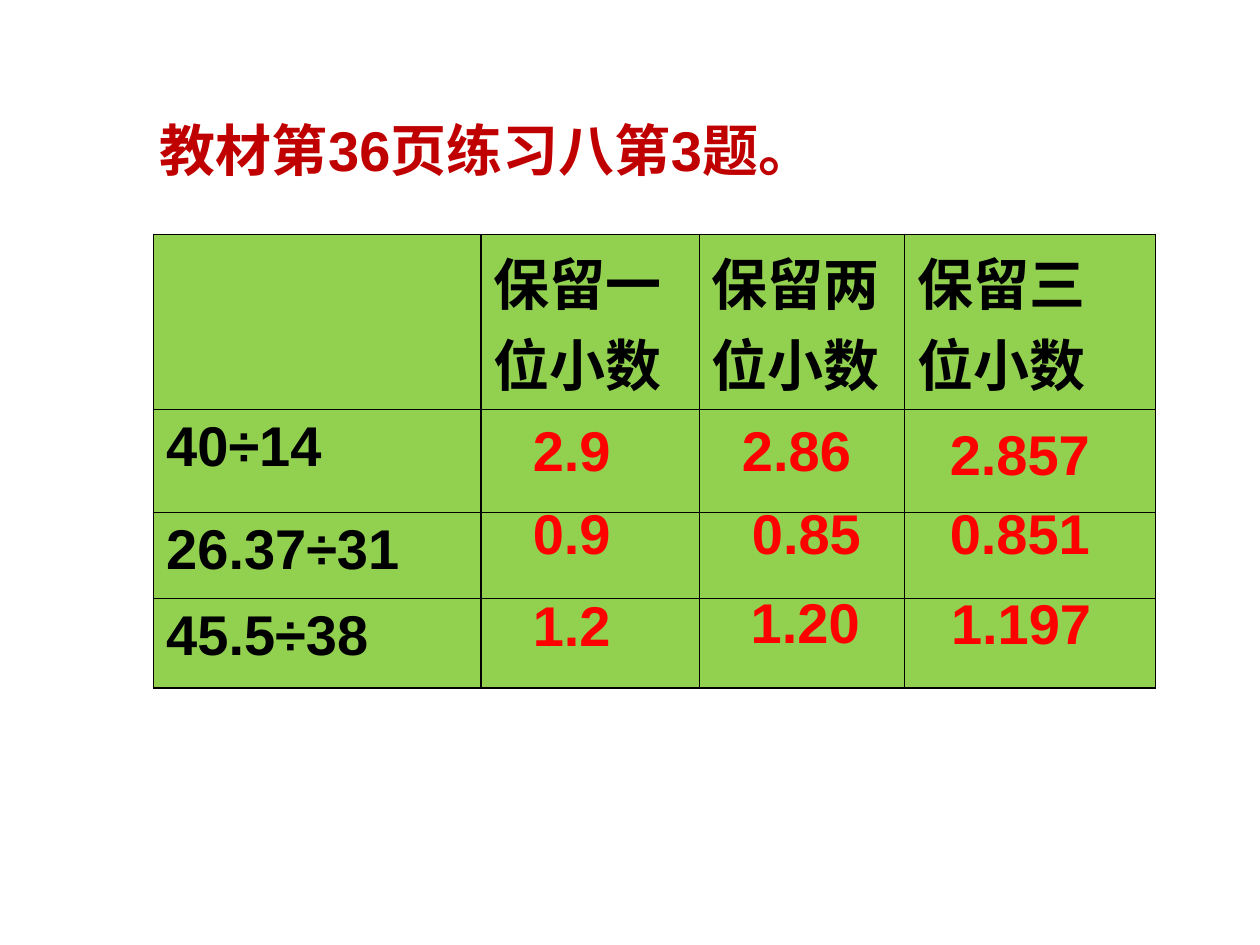
from pptx import Presentation
from pptx.dml.color import RGBColor
from pptx.enum.text import MSO_ANCHOR as Anchor, MSO_AUTO_SIZE as AutoSize, PP_ALIGN as Align
from pptx.oxml import parse_xml
from pptx.oxml.ns import nsdecls
from pptx.util import Pt

COLORS = {"title": "C00000", "cell": "92D050", "text": "000000",
          "answer": "FF0000", "border": "000000"}

COLUMN_WIDTHS = [187.2, 124.6, 117.4, 143.3]
ROW_HEIGHTS = [90.7, 59, 49, 51.1]
EXERCISE = [
    ["", "保留一位小数", "保留两位小数", "保留三\n位小数"],
    ["40÷14", "", "", ""],
    ["26.37÷31", "", "", ""],
    ["45.5÷38", "", "", ""],
]

ANSWER_WIDTHS = [67.7, 85, 113]
# One row per division: (answer, left, top)
ANSWERS = [
    [("2.9", 297.4, 234), ("2.86", 416.9, 233.8), ("2.857", 535.7, 236.2)],
    [("0.9", 297.4, 281.5), ("0.85", 422.6, 281.5), ("0.851", 535.7, 281.5)],
    [("1.2", 297.4, 334.1), ("1.20", 421.9, 331.9), ("1.197", 536.4, 332.6)],
]


def write(frame, text, color, size=32, font="Arial", bold=True, spacing=None):
    """Fill a text frame, one paragraph per line of text."""
    frame.text = text
    for paragraph in frame.paragraphs:
        paragraph.alignment = Align.LEFT
        if spacing:
            paragraph.line_spacing = spacing
        paragraph.font.size = Pt(size)
        paragraph.font.name = font
        paragraph.font.bold = bold
        paragraph.font.color.rgb = RGBColor.from_string(COLORS[color])


class ExerciseSlide:
    def __init__(self, presentation):
        self.slide = presentation.slides.add_slide(presentation.slide_layouts[5])

    def title(self, text, left, top, width, height):
        heading = self.slide.shapes.title
        heading.left, heading.top = Pt(left), Pt(top)
        heading.width, heading.height = Pt(width), Pt(height)
        heading.text_frame.vertical_anchor = Anchor.MIDDLE
        write(heading.text_frame, text, "title", spacing=1.25)

    def table(self, rows, left, top, widths, heights):
        table = self.slide.shapes.add_table(
            len(rows), len(widths), Pt(left), Pt(top),
            Pt(sum(widths)), Pt(sum(heights))).table
        for column, width in zip(table.columns, widths):
            column.width = Pt(width)
        for row, height, texts in zip(table.rows, heights, rows):
            row.height = Pt(height)
            for cell, text in zip(row.cells, texts):
                self.border(cell)
                cell.fill.solid()
                cell.fill.fore_color.rgb = RGBColor.from_string(COLORS["cell"])
                if text:
                    write(cell.text_frame, text, "text")

    def border(self, cell, width=1):
        properties = cell._tc.get_or_add_tcPr()
        for side in ("lnL", "lnR", "lnT", "lnB"):
            properties.append(parse_xml(
                f'<a:{side} {nsdecls("a")} w="{Pt(width)}"><a:solidFill>'
                f'<a:srgbClr val="{COLORS["border"]}"/></a:solidFill></a:{side}>'))

    def answer(self, text, left, top, width, height=46):
        box = self.slide.shapes.add_textbox(Pt(left), Pt(top), Pt(width), Pt(height))
        box.text_frame.word_wrap = True
        box.text_frame.auto_size = AutoSize.SHAPE_TO_FIT_TEXT
        write(box.text_frame, text, "answer")


def main():
    presentation = Presentation()
    presentation.slide_width, presentation.slide_height = Pt(720), Pt(540)
    page = ExerciseSlide(presentation)
    page.title("教材第36页练习八第3题。", 84.2, 39.6, 552.2, 81.4)
    page.table(EXERCISE, 87.8, 133.9, COLUMN_WIDTHS, ROW_HEIGHTS)
    for division in ANSWERS:
        for (text, left, top), width in zip(division, ANSWER_WIDTHS):
            page.answer(text, left, top, width)
    presentation.save("out.pptx")


if __name__ == "__main__":
    main()
